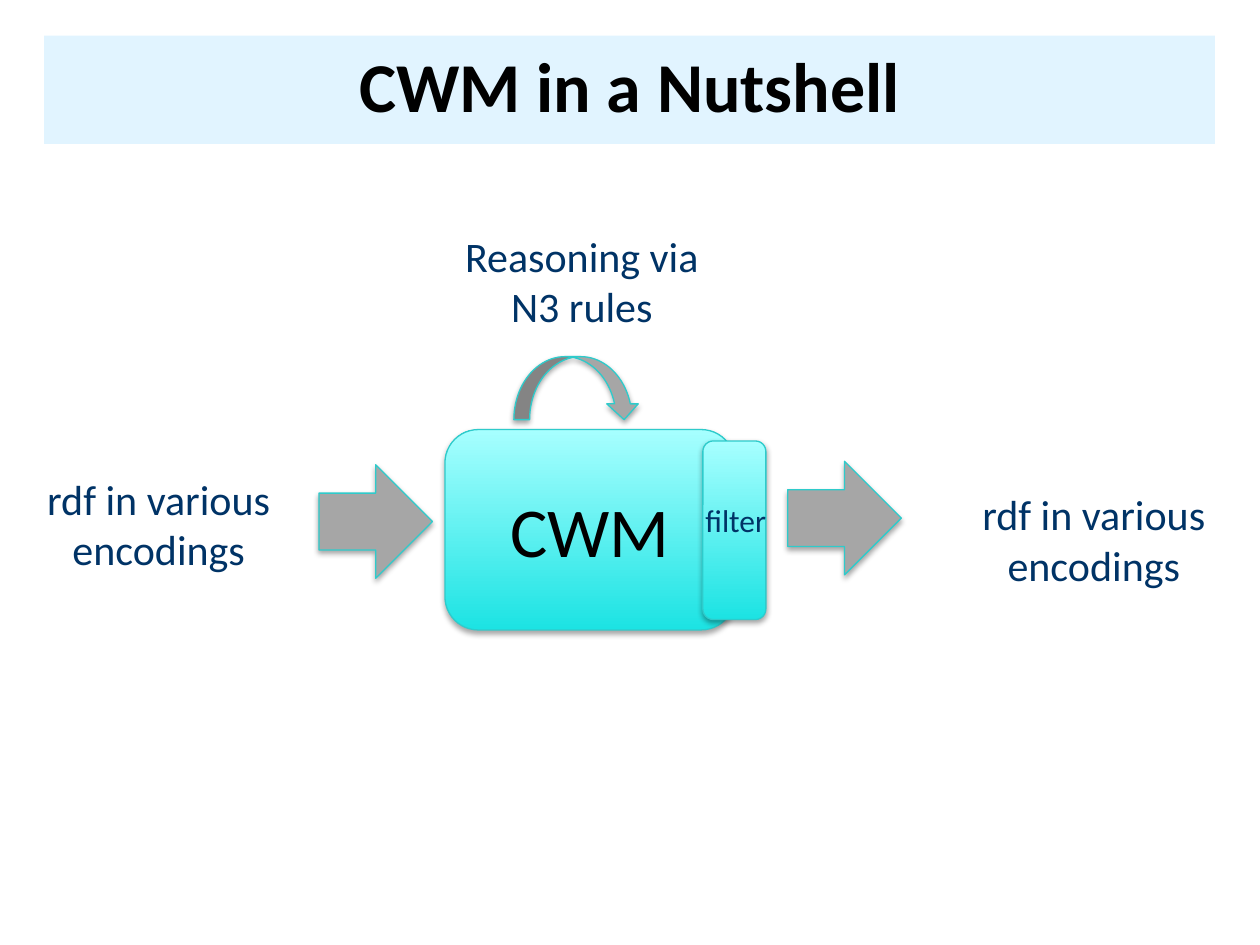
from pptx import Presentation
from pptx.dml.color import RGBColor
from pptx.enum.shapes import MSO_SHAPE
from pptx.enum.text import MSO_ANCHOR, PP_ALIGN
from pptx.oxml import parse_xml
from pptx.oxml.ns import nsdecls, qn
from pptx.util import Cm, Pt

BLACK, NAVY, GREY = "000000", "003366", "A6A6A6"
PALE_BLUE, TEAL = "E1F4FF", "2ECBCB"
DEEP_CYAN, LIGHT_CYAN = "1CE3E3", "A7FFFF"
SHADOW = (
    f'<a:outerShdw {nsdecls("a")} blurRad="40000" dist="23000" dir="5400000" '
    'rotWithShape="0"><a:srgbClr val="000000"><a:alpha val="35000"/>'
    "</a:srgbClr></a:outerShdw>"
)


def color(hex_string):
    return RGBColor.from_string(hex_string)


class SlideBuilder:
    font_name = "Calibri"

    def __init__(self, slide):
        self.slide = slide

    def set_text(self, shape, text, size, hex_color, align=PP_ALIGN.CENTER, bold=False):
        """Fill a shape with text; each line is a paragraph, \\v breaks a line."""
        shape.text_frame.text = text
        for paragraph in shape.text_frame.paragraphs:
            paragraph.alignment = align
            font = paragraph.font
            font.name, font.size, font.bold = self.font_name, Pt(size), bold
            font.color.rgb = color(hex_color)

    def title(self, text, left, top, width, height):
        title = self.slide.shapes.title
        title.left, title.top = Cm(left), Cm(top)
        title.width, title.height = Cm(width), Cm(height)
        title.fill.solid()
        title.fill.fore_color.rgb = color(PALE_BLUE)
        title.text_frame.vertical_anchor = MSO_ANCHOR.MIDDLE
        self.set_text(title, text, 40, BLACK, bold=True)
        title.text_frame.paragraphs[0].line_spacing = 0.9

    def shape(self, kind, left, top, width, height):
        """Add a teal-outlined shape with a soft shadow below it."""
        shape = self.slide.shapes.add_shape(
            kind, Cm(left), Cm(top), Cm(width), Cm(height))
        shape.line.color.rgb = color(TEAL)
        shape.line.width = Pt(0.75)
        shape.shadow.inherit = False
        effects = shape._element.spPr.find(qn("a:effectLst"))
        effects.append(parse_xml(SHADOW))
        return shape

    def arrow(self, kind, left, top, width, height):
        arrow = self.shape(kind, left, top, width, height)
        arrow.fill.solid()
        arrow.fill.fore_color.rgb = color(GREY)

    def box(self, left, top, width, height, text=""):
        box = self.shape(MSO_SHAPE.ROUNDED_RECTANGLE, left, top, width, height)
        box.fill.gradient()
        box.fill.gradient_angle = 90
        for stop, shade in zip(box.fill.gradient_stops, (DEEP_CYAN, LIGHT_CYAN)):
            stop.color.rgb = color(shade)
        if text:
            self.set_text(box, text, 40, BLACK)

    def label(self, text, left, top, width, height, size=24, align=PP_ALIGN.CENTER):
        label = self.slide.shapes.add_textbox(
            Cm(left), Cm(top), Cm(width), Cm(height))
        label.text_frame.word_wrap = False
        self.set_text(label, text, size, NAVY, align)


def main():
    presentation = Presentation()
    presentation.slide_width, presentation.slide_height = Cm(25.4), Cm(19.05)
    title_only = presentation.slide_layouts[5]
    builder = SlideBuilder(presentation.slides.add_slide(title_only))

    builder.title("CWM in a Nutshell", 0.89, 0.72, 23.6, 2.18)
    builder.box(8.97, 8.66, 5.84, 4.04, "CWM")
    for left, top in ((6.43, 9.37), (15.88, 9.3)):
        builder.arrow(MSO_SHAPE.RIGHT_ARROW, left, top, 2.29, 2.29)
    for left, top in ((0.66, 9.42), (19.51, 9.73)):
        builder.label("rdf in various\nencodings", left, top, 5.08, 2.31)
    builder.arrow(MSO_SHAPE.CURVED_DOWN_ARROW, 10.36, 7.19, 2.54, 1.27)
    builder.label("Reasoning via\vN3 rules", 9.09, 4.52, 5.28, 2.31)
    builder.box(14.17, 8.89, 1.27, 3.6)
    builder.label("filter", 13.97, 9.98, 1.75, 1.02, 18, PP_ALIGN.LEFT)

    presentation.save("out.pptx")


if __name__ == "__main__":
    main()
